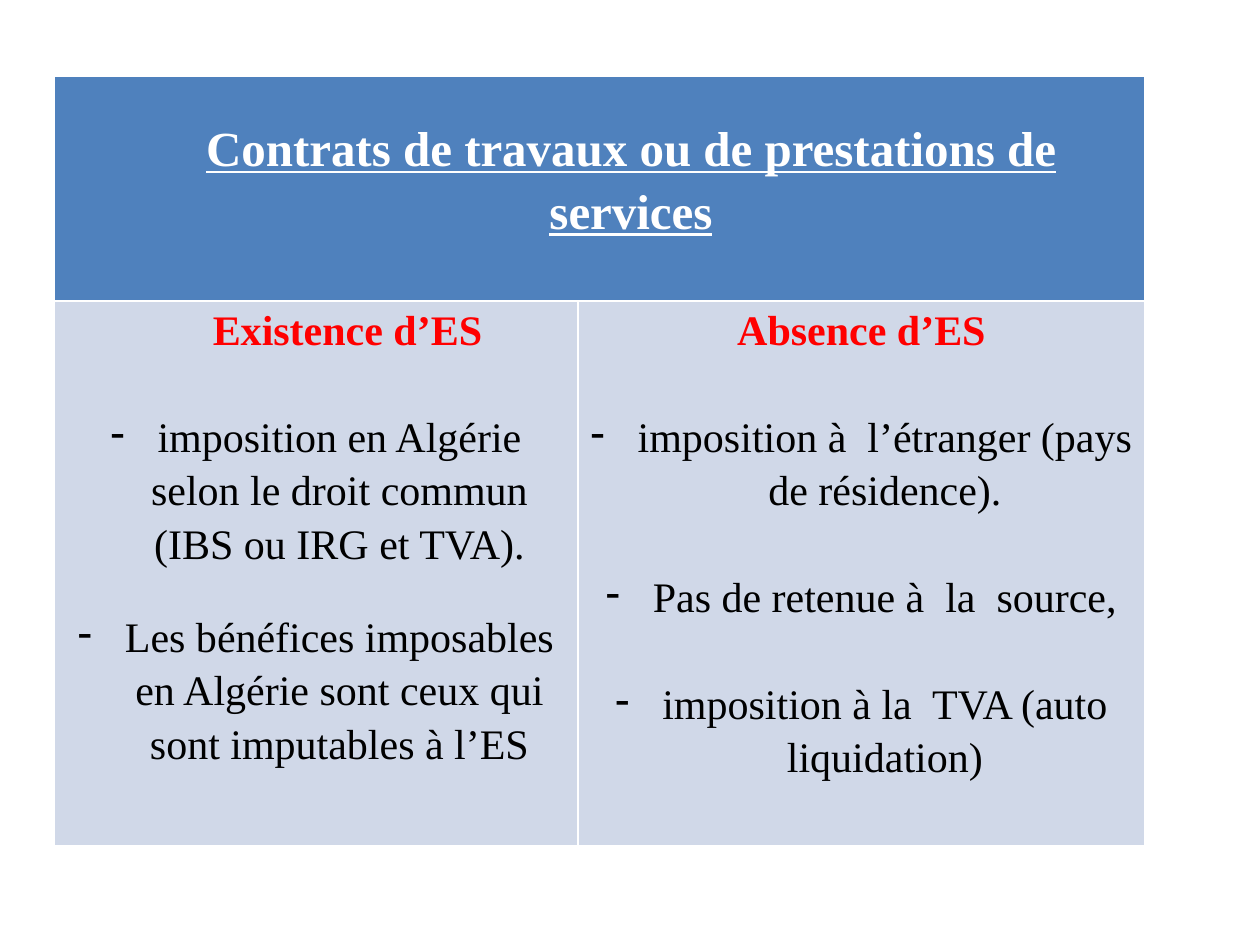
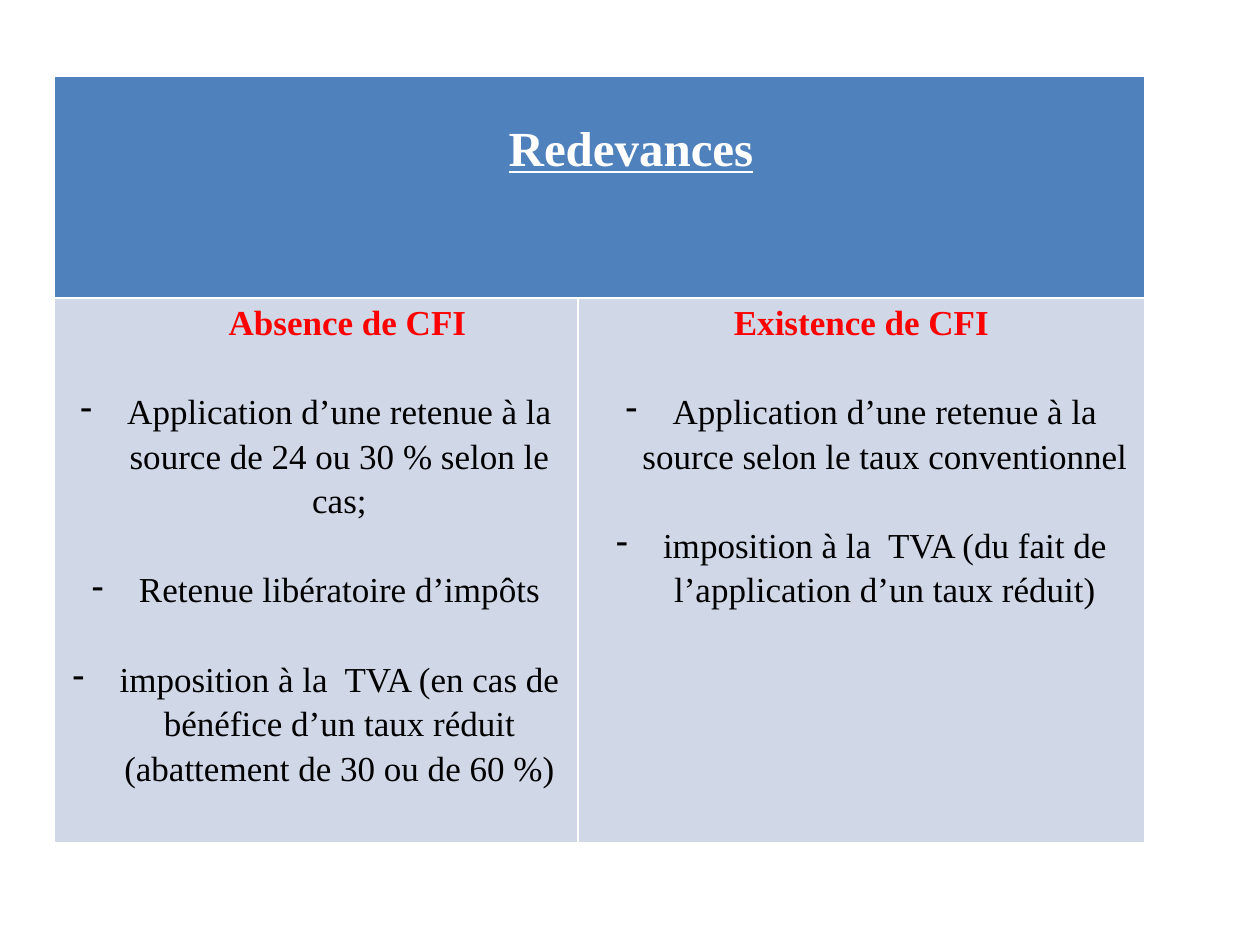
import pptx
import pptx.dml.color
import pptx.enum.text
import pptx.util
import lxml.etree

PIXEL = 914400 // 126
FONT = "Times New Roman"
HEADER_BLUE = "4F81BD"
BODY_BLUE = "D0D8E8"
WHITE = "FFFFFF"
RED = "FF0000"
BLACK = "000000"
TABLE_LEFT, TABLE_TOP = 54, 76
COLUMN_WIDTHS = (524, 567)
BODY_HEIGHT = 545
SIDE_INSET = 9
TITLE_INSET = 39
TITLE_INDENT = 63
ITEM_INDENT = 47
LINE_SPACING = 1.15
BLANK_LINE = 1.107 * LINE_SPACING


def px(length):
    return pptx.util.Emu(length * PIXEL)


def color(value):
    return pptx.dml.color.RGBColor.from_string(value)


def add_text(frame, text, size, fill, bold=False, underline=False,
             left=0, hanging=0, before=0, bullet=None):
    first = not frame.paragraphs[0].runs
    paragraph = frame.paragraphs[0] if first else frame.add_paragraph()
    paragraph.alignment = pptx.enum.text.PP_ALIGN.CENTER
    paragraph.line_spacing = LINE_SPACING
    paragraph.space_before = pptx.util.Pt(round(before, 1))
    run = paragraph.add_run()
    run.text = text
    font = run.font
    font.name, font.size = FONT, pptx.util.Pt(size)
    font.bold, font.underline = bold, underline
    font.color.rgb = color(fill)
    properties = paragraph._p.get_or_add_pPr()
    properties.set("marL", str(px(left)))
    properties.set("indent", str(px(-hanging)))
    if bullet:
        namespace = pptx.oxml.ns.qn("a:buChar")
        lxml.etree.SubElement(properties, pptx.oxml.ns.qn("a:buFontTx"))
        lxml.etree.SubElement(properties, namespace).set("char", bullet)


def format_cell(cell, fill, top=0):
    cell.fill.solid()
    cell.fill.fore_color.rgb = color(fill)
    cell.margin_left = cell.margin_right = px(SIDE_INSET)
    cell.margin_top, cell.margin_bottom = px(top), 0
    cell.text_frame.word_wrap = True
    return cell.text_frame


def fill_header(table, title):
    table.cell(0, 0).merge(table.cell(0, 1))
    frame = format_cell(table.cell(0, 0), HEADER_BLUE, top=TITLE_INSET)
    add_text(frame, title, 28, WHITE, bold=True, underline=True, left=TITLE_INDENT)


def fill_case(cell, heading, items, size, left, hanging, gaps):
    frame = format_cell(cell, BODY_BLUE)
    add_text(frame, heading, size, RED, bold=True, left=left, hanging=hanging)
    for item, gap in zip(items, gaps):
        add_text(frame, item, size, BLACK, left=ITEM_INDENT, hanging=ITEM_INDENT,
                 before=gap * BLANK_LINE, bullet="-")


def add_comparison_slide(presentation, title, header_height, size, cases):
    slide = presentation.slides.add_slide(presentation.slide_layouts[6])
    heights = (header_height, BODY_HEIGHT)
    table = slide.shapes.add_table(
        2, 2, px(TABLE_LEFT), px(TABLE_TOP),
        px(sum(COLUMN_WIDTHS)), px(sum(heights))).table
    table.horz_banding = False
    for column, width in zip(table.columns, COLUMN_WIDTHS):
        column.width = px(width)
    for row, height in zip(table.rows, heights):
        row.height = px(height)
    fill_header(table, title)
    heading_indents = ((TITLE_INDENT, 0), (ITEM_INDENT, ITEM_INDENT))
    for index, (heading, items, gaps) in enumerate(cases):
        left, hanging = heading_indents[index]
        fill_case(table.cell(1, index), heading, items, size, left, hanging, gaps)


def main():
    presentation = pptx.Presentation()
    presentation.slide_width = pptx.util.Inches(10)
    presentation.slide_height = pptx.util.Inches(7.5)
    add_comparison_slide(
        presentation, "Contrats de travaux ou de prestations de services", 225, 24, [
            ("Existence d’ES", [
                "imposition en Algérie selon le droit commun (IBS ou IRG et TVA).",
                "Les bénéfices imposables en Algérie sont ceux qui sont imputables à l’ES",
            ], (24, 18)),
            ("Absence d’ES", [
                "imposition à  l’étranger (pays de résidence).",
                "Pas de retenue à  la  source,",
                "imposition à la  TVA (auto liquidation)",
            ], (24, 24, 24)),
        ])
    add_comparison_slide(
        presentation, "Redevances", 222, 20, [
            ("Absence de CFI", [
                "Application d’une retenue à la source de 24 ou 30 % selon le cas;",
                "Retenue libératoire d’impôts",
                "imposition à la  TVA (en cas de bénéfice d’un taux réduit "
                "(abattement de 30 ou de 60 %)",
            ], (20, 20, 20)),
            ("Existence de CFI", [
                "Application d’une retenue à la source selon le taux conventionnel",
                "imposition à la  TVA (du fait de l’application d’un taux réduit)",
            ], (20, 20)),
        ])
    presentation.save("out.pptx")


if __name__ == "__main__":
    main()
